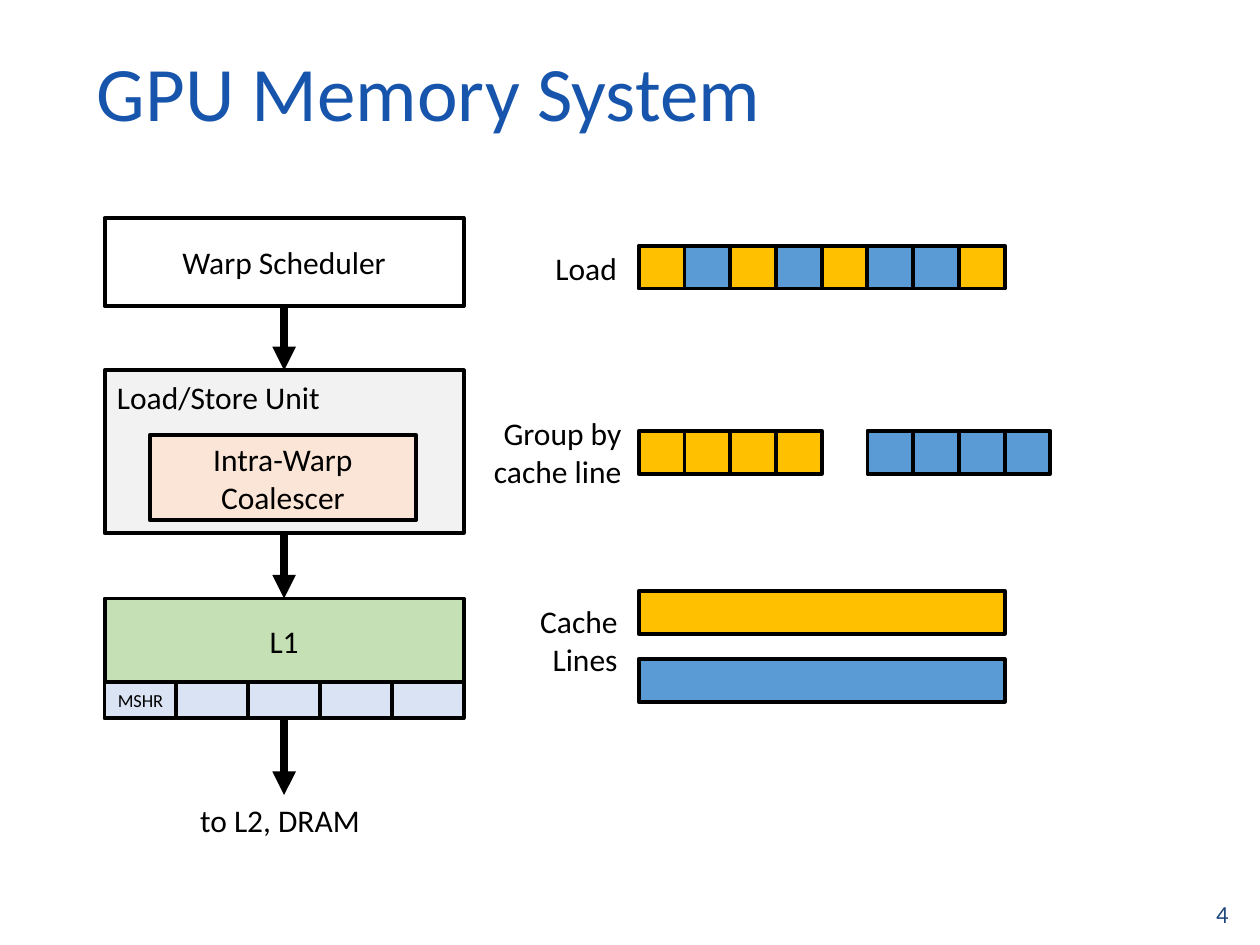
from lxml import etree
from pptx import Presentation
from pptx.dml.color import RGBColor
from pptx.enum.shapes import MSO_CONNECTOR, MSO_SHAPE
from pptx.enum.text import MSO_ANCHOR, PP_ALIGN
from pptx.oxml.ns import qn
from pptx.util import Inches, Pt

RECTANGLE, STRAIGHT = MSO_SHAPE.RECTANGLE, MSO_CONNECTOR.STRAIGHT
LEFT, CENTER, RIGHT = PP_ALIGN.LEFT, PP_ALIGN.CENTER, PP_ALIGN.RIGHT
TOP, MIDDLE = MSO_ANCHOR.TOP, MSO_ANCHOR.MIDDLE
TOP_SIDE, BOTTOM_SIDE = 0, 2

BLACK, WHITE, GRAY = "000000", "FFFFFF", "F2F2F2"
YELLOW, BLUE = "FFC000", "5B9BD5"
PEACH, GREEN, PALE_BLUE = "FBE5D6", "C5E0B4", "DAE3F3"
TITLE_BLUE, NUMBER_BLUE = "1755AD", "1F497D"


def color(hex_string):
    return RGBColor.from_string(hex_string)


def write(shape, text, size=18, ink=BLACK, align=LEFT, anchor=TOP, font="Calibri"):
    frame = shape.text_frame
    frame.word_wrap = True
    frame.vertical_anchor = anchor
    paragraph = frame.paragraphs[0]
    paragraph.alignment = align
    run = paragraph.add_run()
    run.text = text
    run.font.name, run.font.size = font, Pt(size)
    run.font.color.rgb = color(ink)


class Diagram:
    """Draws on one slide, on a grid of 100 columns by 75 rows."""

    outline = 2.25
    arrow_width = 4.5

    def __init__(self, presentation):
        self.slide = presentation.slides.add_slide(presentation.slide_layouts[6])
        self.column = presentation.slide_width / 100
        self.row = presentation.slide_height / 75

    def place(self, column, row):
        return round(column * self.column), round(row * self.row)

    def box(self, column, row, width, height, fill, text="", size=18):
        shape = self.slide.shapes.add_shape(
            RECTANGLE, *self.place(column, row), *self.place(width, height))
        shape.shadow.inherit = False
        shape.fill.solid()
        shape.fill.fore_color.rgb = color(fill)
        shape.line.color.rgb = color(BLACK)
        shape.line.width = Pt(self.outline)
        if text:
            write(shape, text, size=size, align=CENTER, anchor=MIDDLE)
        return shape

    def cells(self, column, row, width, height, fills, first_text=""):
        for index, fill in enumerate(fills):
            self.box(column + index * width, row, width, height, fill,
                     "" if index else first_text, size=10.5)

    def label(self, column, row, width, height, text, **style):
        shape = self.slide.shapes.add_textbox(
            *self.place(column, row), *self.place(width, height))
        write(shape, text, **style)

    def arrow(self, source, target=None, length=0):
        column = source.left + source.width // 2
        start = source.top + source.height
        connector = self.slide.shapes.add_connector(
            STRAIGHT, column, start, column, start + round(length * self.row))
        connector.begin_connect(source, BOTTOM_SIDE)
        if target is not None:
            connector.end_connect(target, TOP_SIDE)
        connector.line.color.rgb = color(BLACK)
        connector.line.width = Pt(self.arrow_width)
        line = connector.line._get_or_add_ln()
        etree.SubElement(line, qn("a:tailEnd"), type="triangle")
        etree.SubElement(connector._element.spPr, qn("a:effectLst"))


def main():
    presentation = Presentation()
    presentation.slide_width, presentation.slide_height = Inches(10), Inches(7.5)
    diagram = Diagram(presentation)

    # Title and slide number
    diagram.label(6.7, 2.6, 90, 9.2, "GPU Memory System",
                  size=44, ink=TITLE_BLUE, anchor=MIDDLE)
    diagram.label(75.2, 70.5, 23.3, 4, "4",
                  size=14, ink=NUMBER_BLUE, align=RIGHT, anchor=MIDDLE)

    # Pipeline on the left
    left, width = 8.3, 28.5
    scheduler = diagram.box(left, 17.3, width, 7, WHITE, "Warp Scheduler")
    load_store = diagram.box(left, 29.4, width, 12.9, GRAY)
    diagram.label(left, 29.5, 29, 4, "Load/Store Unit")
    diagram.box(11.9, 34.5, 21.1, 6.8, PEACH, "Intra-Warp Coalescer")
    cache = diagram.box(left, 47.5, width, 6.8, GREEN, "L1")
    diagram.arrow(scheduler, load_store)
    diagram.arrow(load_store, cache)
    diagram.arrow(cache, length=8.8)
    diagram.cells(left, 54.1, width / 5, 2.9, [PALE_BLUE] * 5, "MSHR")
    diagram.label(14.9, 63.1, 16.6, 4, "to L2, DRAM")

    # Memory requests on the right
    start, cell, height = 50.7, 3.63, 3.4
    diagram.label(43.1, 19.3, 7.9, 4, "Load")
    diagram.cells(start, 19.5, cell, height,
                  [YELLOW, BLUE, YELLOW, BLUE, YELLOW, BLUE, BLUE, YELLOW])

    diagram.label(36.2, 32.4, 14.1, 7.1, "Group by cache line", align=RIGHT)
    for offset, fill in ((0, YELLOW), (5, BLUE)):
        diagram.cells(start + offset * cell, 34.2, cell, height, [fill] * 4)

    diagram.label(41.3, 47.3, 8.7, 7.1, "Cache Lines", align=RIGHT)
    for row, fill in ((46.9, YELLOW), (52.3, BLUE)):
        diagram.box(start, row, 8 * cell, height, fill)

    presentation.save("out.pptx")


if __name__ == "__main__":
    main()
